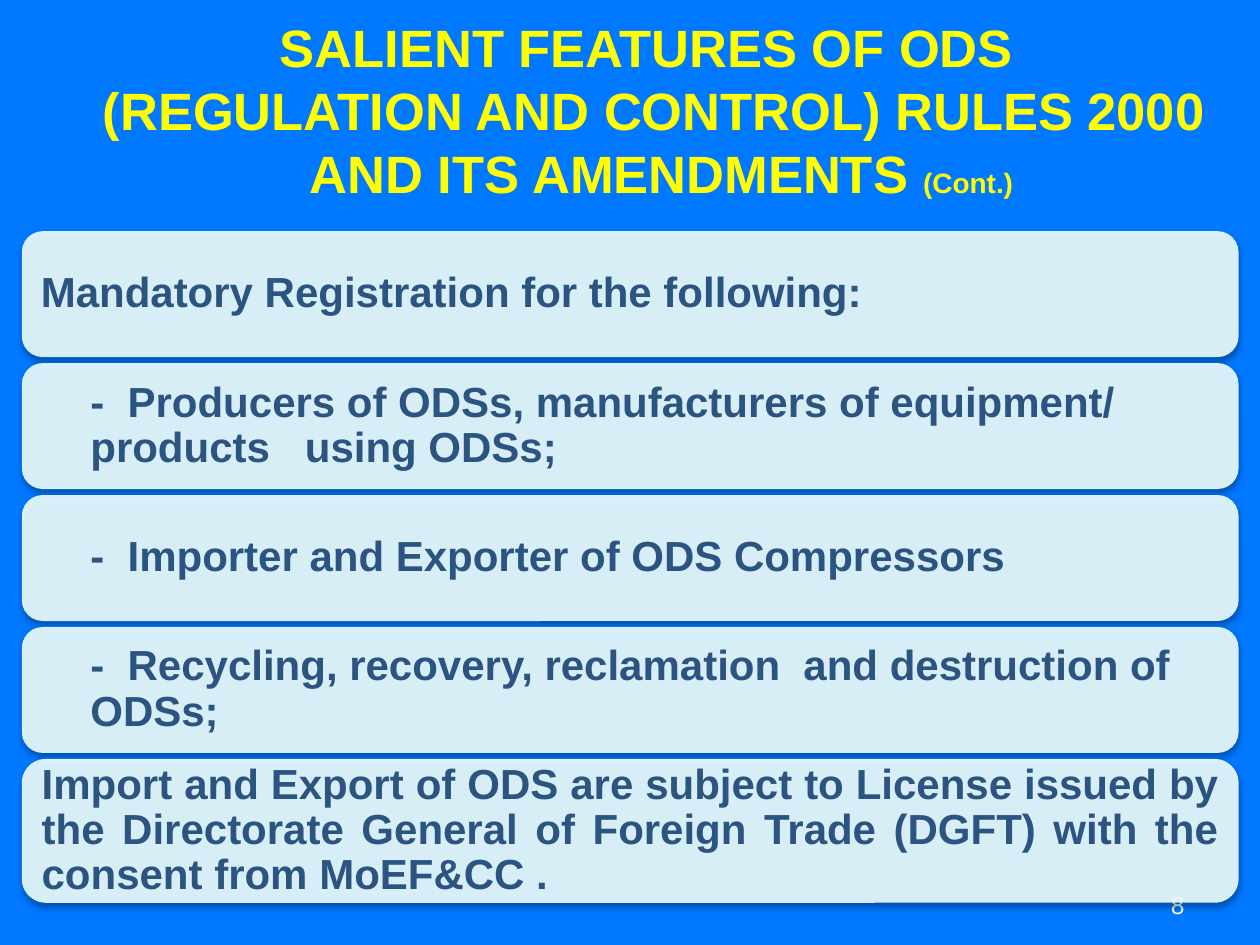
from lxml.etree import SubElement
from pptx import Presentation
from pptx.dml.color import RGBColor
from pptx.enum.shapes import MSO_SHAPE
from pptx.enum.text import MSO_ANCHOR, PP_ALIGN
from pptx.oxml.ns import qn
from pptx.util import Cm, Pt

COLORS = {
    "background": "0078FF",
    "title": "FFFF00",
    "number": "FFFFFF",
    "card": "EFFFFF",
    "text": "2B5481",
    "shadow": "000000",
}
CARD_LEFT, CARD_TOP, CARD_WIDTH = 0.44, 4.66, 24.53
CARD_HEIGHT, CARD_PITCH, LAST_HEIGHT = 2.54, 2.66, 2.9
TITLE_LINES = [
    [("SALIENT FEATURES OF ODS  ", 30)],
    [("(REGULATION AND CONTROL) RULES 2000 ", 30)],
    [("AND ITS AMENDMENTS ", 30), ("(Cont.)", 16)],
]
HEADING = "Mandatory Registration for the following:"
ITEMS = [
    "-  Producers of ODSs, manufacturers of equipment/\vproducts   using ODSs;",
    "-  Importer and Exporter of ODS Compressors",
    "-  Recycling, recovery, reclamation  and destruction of ODSs;",
]
LICENSE = (
    "Import and Export of ODS are subject to License issued by the Directorate "
    "General of Foreign Trade (DGFT) with the consent from MoEF&CC ."
)


def rgb(name):
    """Return the named colour."""
    return RGBColor.from_string(COLORS[name])


def style_run(r, size, color, bold=True):
    """Set the font of a run."""
    r.font.name = "Arial"
    r.font.size = Pt(size)
    r.font.bold = bold
    r.font.color.rgb = rgb(color)


def add_text(slide, box, lines, align, color, bold):
    """Add a bottom-anchored text box whose lines are lists of (text, size)."""
    tf = slide.shapes.add_textbox(*map(Cm, box)).text_frame
    tf.word_wrap = True
    tf.vertical_anchor = MSO_ANCHOR.BOTTOM
    for i, runs in enumerate(lines):
        p = tf.add_paragraph() if i else tf.paragraphs[0]
        p.alignment = align
        for text, size in runs:
            r = p.add_run()
            r.text = text
            style_run(r, size, color, bold)


def add_alpha(color, percent):
    """Give a colour element an opacity."""
    SubElement(color, qn("a:alpha"), val=str(percent * 1000))


def add_shadow(s):
    """Give a shape a soft shadow below it."""
    s.shadow.inherit = False
    effects = s._element.spPr.find(qn("a:effectLst"))
    shadow = SubElement(effects, qn("a:outerShdw"), blurRad=str(Pt(3.5)),
                        dist=str(Pt(2.2)), dir="5400000", rotWithShape="0")
    add_alpha(SubElement(shadow, qn("a:srgbClr"), val=COLORS["shadow"]), 32)


def add_card(slide, row, text, height=CARD_HEIGHT, indent=0, align=PP_ALIGN.LEFT):
    """Add a rounded text card in the given row."""
    s = slide.shapes.add_shape(
        MSO_SHAPE.ROUNDED_RECTANGLE, Cm(CARD_LEFT),
        Cm(CARD_TOP + row * CARD_PITCH), Cm(CARD_WIDTH), Cm(height))
    s.fill.solid()
    s.fill.fore_color.rgb = rgb("card")
    add_alpha(s._element.spPr.find(qn("a:solidFill"))[0], 90)
    s.line.fill.background()
    add_shadow(s)
    tf = s.text_frame
    tf.word_wrap = True
    tf.vertical_anchor = MSO_ANCHOR.MIDDLE
    tf.margin_left = tf.margin_right = Cm(0.26)
    tf.margin_top = tf.margin_bottom = Cm(0)
    p = tf.paragraphs[0]
    p.text = text
    p.alignment = align
    p.line_spacing = 0.9
    p._p.get_or_add_pPr().set("marL", str(Cm(indent)))
    for r in p.runs:
        style_run(r, 24, "text")


def main():
    """Build the slide and save it."""
    prs = Presentation()
    prs.slide_width, prs.slide_height = Cm(25.4), Cm(19.05)
    slide = prs.slides.add_slide(prs.slide_layouts[6])
    slide.background.fill.solid()
    slide.background.fill.fore_color.rgb = rgb("background")
    add_text(slide, (1.27, 0, 24.13, 4.24), TITLE_LINES, PP_ALIGN.CENTER, "title", True)
    add_text(slide, (18.2, 17.35, 5.93, 1.32), [[("8", 14)]], PP_ALIGN.RIGHT, "number", False)
    add_card(slide, 0, HEADING)
    for row, item in enumerate(ITEMS, 1):
        add_card(slide, row, item, indent=1)
    add_card(slide, len(ITEMS) + 1, LICENSE, LAST_HEIGHT, align=PP_ALIGN.JUSTIFY)
    prs.save("out.pptx")


if __name__ == "__main__":
    main()
